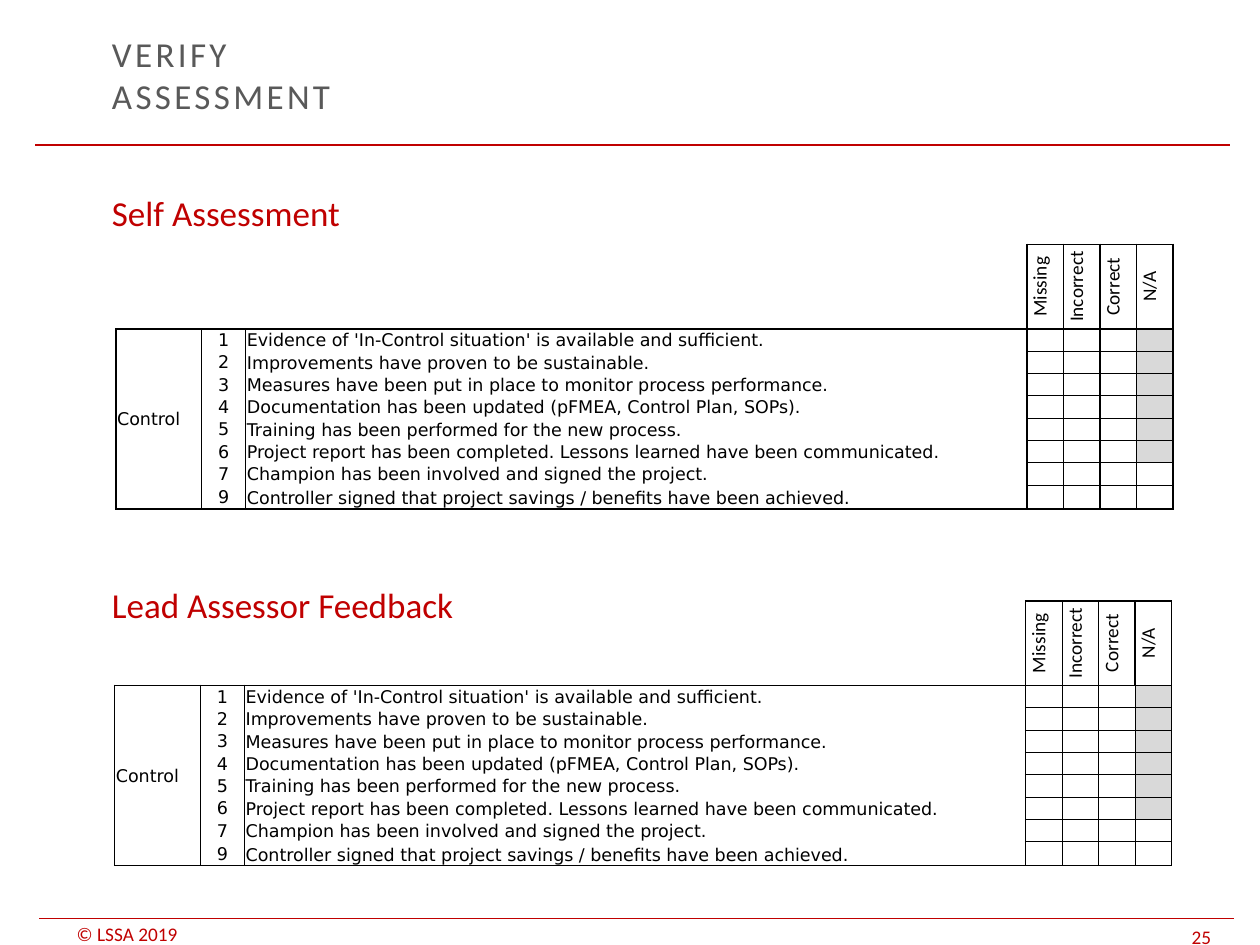
import lxml.etree
import pptx
import pptx.dml.color
import pptx.enum.shapes
import pptx.enum.text
import pptx.oxml.ns
import pptx.util

Inches = pptx.util.Inches
Pt = pptx.util.Pt
Align = pptx.enum.text.PP_ALIGN
Anchor = pptx.enum.text.MSO_ANCHOR
qn = pptx.oxml.ns.qn

COLORS = {"red": "C00000", "gray": "595959", "black": "000000", "shade": "D9D9D9"}
PLAIN = "{2D5ABB26-0587-4C30-8999-92F81FD0307C}"  # table style without grid

HEADS = ["Missing", "Incorrect", "Correct", "N/A"]
CHECKS = [
    ("1", "Evidence of 'In-Control situation' is available and sufficient."),
    ("2", "Improvements have proven to be sustainable."),
    ("3", "Measures have been put in place to monitor process performance."),
    ("4", "Documentation has been updated (pFMEA, Control Plan, SOPs)."),
    ("5", "Training has been performed for the new process."),
    ("6", "Project report has been completed. Lessons learned have been communicated."),
    ("7", "Champion has been involved and signed the project."),
    ("9", "Controller signed that project savings / benefits have been achieved."),
]
SHADED = 6  # checks that need no N/A answer
COLS = [0.68, 0.35, 6.2] + [0.29] * len(HEADS)
LAST = len(CHECKS) + 1
HEAD_H, FOOT_H = 0.67, 0.19


def rgb(name):
    return pptx.dml.color.RGBColor.from_string(COLORS[name])


def apply(item, form):
    for key, value in form.items():
        setattr(item, key, value)


def write(para, text, size, color, face="Calibri"):
    run = para.add_run()
    run.text = text
    apply(run.font, {"size": Pt(size), "name": face})
    run.font.color.rgb = rgb(color)
    return run


def frame(slide, box, anchor, pad):
    body = slide.shapes.add_textbox(*map(Inches, box)).text_frame
    apply(body, {"word_wrap": True, "vertical_anchor": anchor,
                 "margin_top": Inches(pad), "margin_bottom": Inches(pad)})
    return body


def rule(slide, left, top, width):
    line = slide.shapes.add_connector(
        pptx.enum.shapes.MSO_CONNECTOR.STRAIGHT,
        *map(Inches, (left, top, left + width, top)))
    line.line.color.rgb = rgb("red")
    line.line.width = Pt(0.75)
    lxml.etree.SubElement(line._element.spPr, qn("a:effectLst"))


def title(slide, box):
    para = frame(slide, box, Anchor.MIDDLE, 0.05).paragraphs[0]
    for num, word in enumerate(["VERIFY", "ASSESSMENT"]):
        if num:
            para.add_line_break()
        run = write(para, word, 20, "gray")
        run.font._element.set("spc", "190")


def topics(slide, box):
    body = frame(slide, box, Anchor.TOP, 0.05)
    write(body.paragraphs[0], "Self Assessment", 20, "red")
    para = body.add_paragraph()
    para.space_before = Pt(200)  # room for the first table
    write(para, "Lead Assessor Feedback", 20, "red")


def small(slide, box, text):
    write(frame(slide, box, Anchor.BOTTOM, 0).paragraphs[0], text, 11, "red")


def across(edge, col):
    """Weight of a horizontal border; edge 0 is the table's top."""
    if edge in (1, LAST):
        return 1
    if col < 3:
        return 0
    return 0.5 if edge else 1


def upright(row, edge):
    """Weight of a vertical border; edge 0 is the table's left."""
    if row == 0 and edge < 3:
        return 0
    return 0.5 if edge == 4 or (edge == 6 and row) else 1


def border(cell, side, weight):
    line = lxml.etree.SubElement(cell._tc.get_or_add_tcPr(), qn("a:" + side))
    if not weight:
        lxml.etree.SubElement(line, qn("a:noFill"))
        return
    line.set("w", str(Pt(weight)))
    fill = lxml.etree.SubElement(line, qn("a:solidFill"))
    lxml.etree.SubElement(fill, qn("a:srgbClr")).set("val", COLORS["black"])


def label(cell, row, col, text):
    pad = Inches(0.01)
    middle = row and col < 2
    apply(cell, {"margin_left": pad, "margin_right": pad, "margin_top": pad,
                 "margin_bottom": 0,
                 "vertical_anchor": Anchor.MIDDLE if middle else Anchor.BOTTOM})
    para = cell.text_frame.paragraphs[0]
    if not text:  # keep empty rows low
        lxml.etree.SubElement(para._p, qn("a:endParaRPr")).set("sz", "800")
        return
    para.alignment = Align.LEFT if row and col != 1 else Align.CENTER
    if row:
        write(para, text, 10, "black", "DejaVu Sans")
    else:
        write(para, text, 11, "black")
        cell._tc.get_or_add_tcPr().set("vert", "vert270")


def checks(slide, box):
    grid = slide.shapes.add_table(LAST, len(COLS), *map(Inches, box)).table
    apply(grid, {"first_row": False, "horz_banding": False})
    grid._tbl.tblPr.find(qn("a:tableStyleId")).text = PLAIN
    for col, width in zip(grid.columns, COLS):
        col.width = Inches(width)
    step = (box[3] - HEAD_H - FOOT_H) / (LAST - 2)
    for line, high in zip(grid.rows, [HEAD_H] + [step] * (LAST - 2) + [FOOT_H]):
        line.height = Inches(high)

    blank = [""] * len(HEADS)
    rows = [["", "", ""] + HEADS] + [["", num, text] + blank for num, text in CHECKS]
    rows[1][0] = "Control"
    grid.cell(1, 0).merge(grid.cell(LAST - 1, 0))
    for row, texts in enumerate(rows):
        for col, text in enumerate(texts):
            cell = grid.cell(row, col)
            label(cell, row, col, text)
            foot = LAST if cell.is_merge_origin else row + 1
            for side, weight in {"lnL": upright(row, col),
                                 "lnR": upright(row, col + 1),
                                 "lnT": across(row, col),
                                 "lnB": across(foot, col)}.items():
                border(cell, side, weight)
            if col == len(COLS) - 1 and 1 <= row <= SHADED:
                cell.fill.solid()
                cell.fill.fore_color.rgb = rgb("shade")
            else:
                cell.fill.background()


def main():
    deck = pptx.Presentation()
    apply(deck, {"slide_width": Inches(10), "slide_height": Inches(7.5)})
    slide = deck.slides.add_slide(deck.slide_layouts[6])
    # Footer and rules
    small(slide, (0.51, 7.32, 1.42, 0.18), "© LSSA 2019")
    small(slide, (9.36, 7.31, 0.64, 0.22), "25")
    rule(slide, 0.28, 1.15, 9.48)
    rule(slide, 0.31, 7.29, 9.48)
    # Headings
    title(slide, (0.79, 0.26, 7.09, 0.66))
    topics(slide, (0.79, 1.47, 8.66, 5.51))
    # Check lists
    checks(slide, (0.92, 1.94, 8.39, 2.09))
    checks(slide, (0.91, 4.77, 8.39, 2.09))
    deck.save("out.pptx")


if __name__ == "__main__":
    main()
